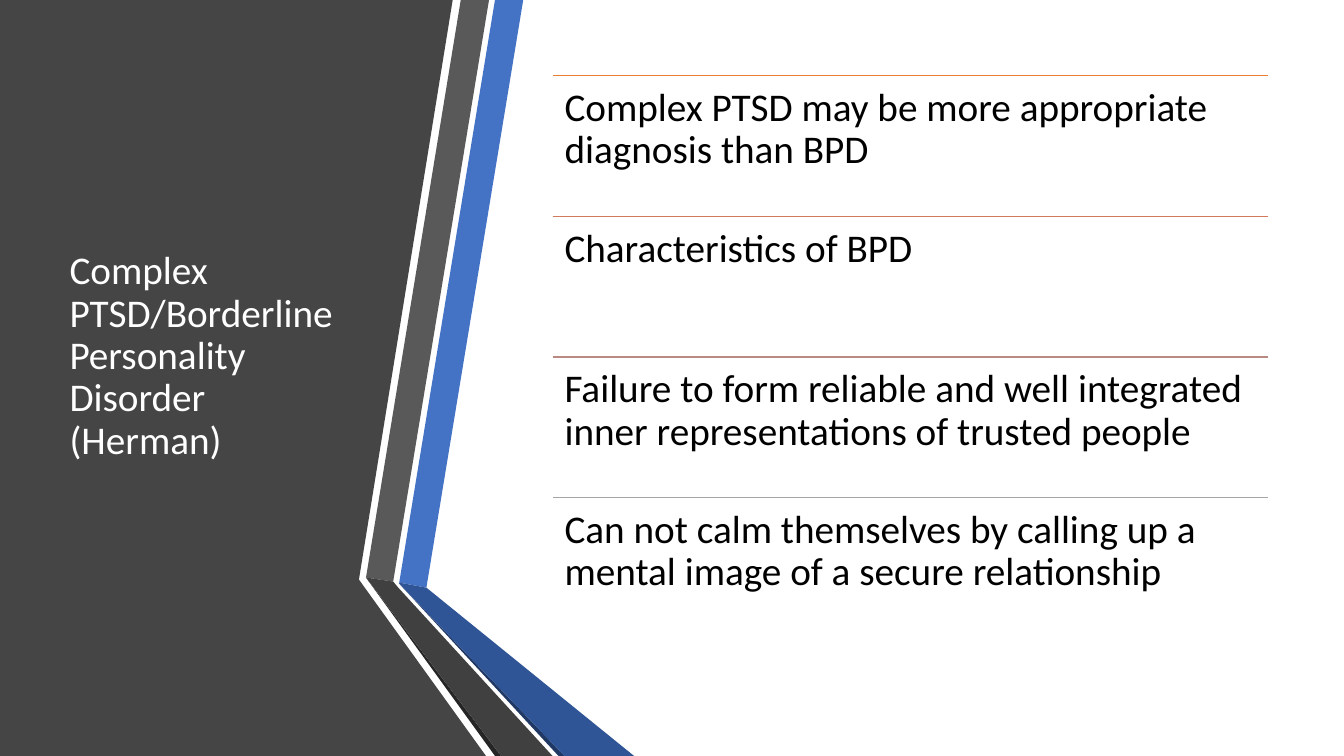
from dataclasses import dataclass
from lxml.etree import SubElement
from pptx import Presentation
from pptx.dml.color import RGBColor as RGB
from pptx.enum.shapes import MSO_CONNECTOR as LINE
from pptx.enum.text import MSO_ANCHOR as ANCHOR, MSO_AUTO_SIZE as FIT, PP_ALIGN as ALIGN
from pptx.oxml.ns import qn
from pptx.util import Inches, Pt


@dataclass
class Theme:
    font: str = "Calibri"
    size: int = 28
    rule: int = 1
    light: str = "FFFFFF"
    dark: str = "000000"
    panel: str = "454545"
    blue: str = "4472C4"
    gray: str = "595959"
    coal: str = "262626"
    navy: str = "203864"
    fold: str = "2F5597"
    slate: str = "404040"
    rules: tuple = ("ED7D31", "D17B5C", "B98A82", "A5A5A5")


theme = Theme()


def write(box, text, color=theme.dark, inset=0.1, anchor=ANCHOR.TOP):
    frame = box.text_frame
    frame.word_wrap = True
    frame.auto_size = FIT.NONE
    frame.vertical_anchor = anchor
    frame.margin_left = frame.margin_right = Inches(inset)
    frame.margin_top = frame.margin_bottom = Inches(inset)
    frame.text = text
    para = frame.paragraphs[0]
    para.alignment = ALIGN.LEFT
    para.line_spacing = 0.9
    para.font.name = theme.font
    para.font.size = Pt(theme.size)
    para.font.color.rgb = RGB.from_string(color)


deck = Presentation()
deck.slide_width = Inches(13.33)
deck.slide_height = Inches(7.5)
slide = deck.slides.add_slide(deck.slide_layouts[5])
shapes = slide.shapes
slide.background.fill.solid()
slide.background.fill.fore_color.rgb = RGB.from_string(theme.light)

bands = [
    (theme.panel, [(0, 0), (4.49, 0), (3.56, 5.75), (4.82, 7.5), (0, 7.5)]),
    (theme.blue, [(3.96, 5.78), (4.23, 5.83), (5.19, 0), (4.91, 0)]),
    (theme.gray, [(4.85, 0), (4.57, 0), (3.63, 5.73), (3.9, 5.77)]),
    (theme.coal, [(3.63, 5.73), (4.91, 7.5), (4.97, 7.5)]),
    (theme.navy, [(3.96, 5.79), (5.54, 7.5), (5.6, 7.5)]),
    (theme.fold, [(3.96, 5.78), (3.96, 5.79), (5.6, 7.5), (6.29, 7.5), (4.23, 5.83)]),
    (theme.slate, [(3.63, 5.73), (4.97, 7.5), (5.48, 7.5), (3.95, 5.83), (3.9, 5.77)]),
]
for color, points in bands:
    start, *rest = [(Inches(x), Inches(y)) for x, y in points]
    pen = shapes.build_freeform(*start)
    pen.add_line_segments(rest, close=True)
    band = pen.convert_to_shape()
    band.shadow.inherit = False
    band.fill.solid()
    band.fill.fore_color.rgb = RGB.from_string(color)
    band.line.fill.background()

title = shapes.title
title.left, title.top = Inches(0.59), Inches(0.75)
title.width, title.height = Inches(3.04), Inches(5.58)
write(title, "Complex PTSD/Borderline Personality Disorder (Herman)",
      color=theme.light, anchor=ANCHOR.MIDDLE)
shapes._spTree.append(title._element)

points = [
    "Complex PTSD may be more appropriate diagnosis than BPD",
    "Characteristics of BPD",
    "Failure to form reliable and well integrated inner representations of trusted people",
    "Can not calm themselves by calling up a mental image of a secure relationship",
]
left, width = Inches(5.48), Inches(7.1)
top, step = Inches(0.75), Inches(5.58) // len(points)
for row, (point, color) in enumerate(zip(points, theme.rules)):
    y = top + row * step
    rule = shapes.add_connector(LINE.STRAIGHT, left, y, left + width, y)
    rule.line.color.rgb = RGB.from_string(color)
    rule.line.width = Pt(theme.rule)
    SubElement(rule._element.spPr, qn("a:effectLst"))
    write(shapes.add_textbox(left, y, width, step), point, inset=0.12)

deck.save("out.pptx")
